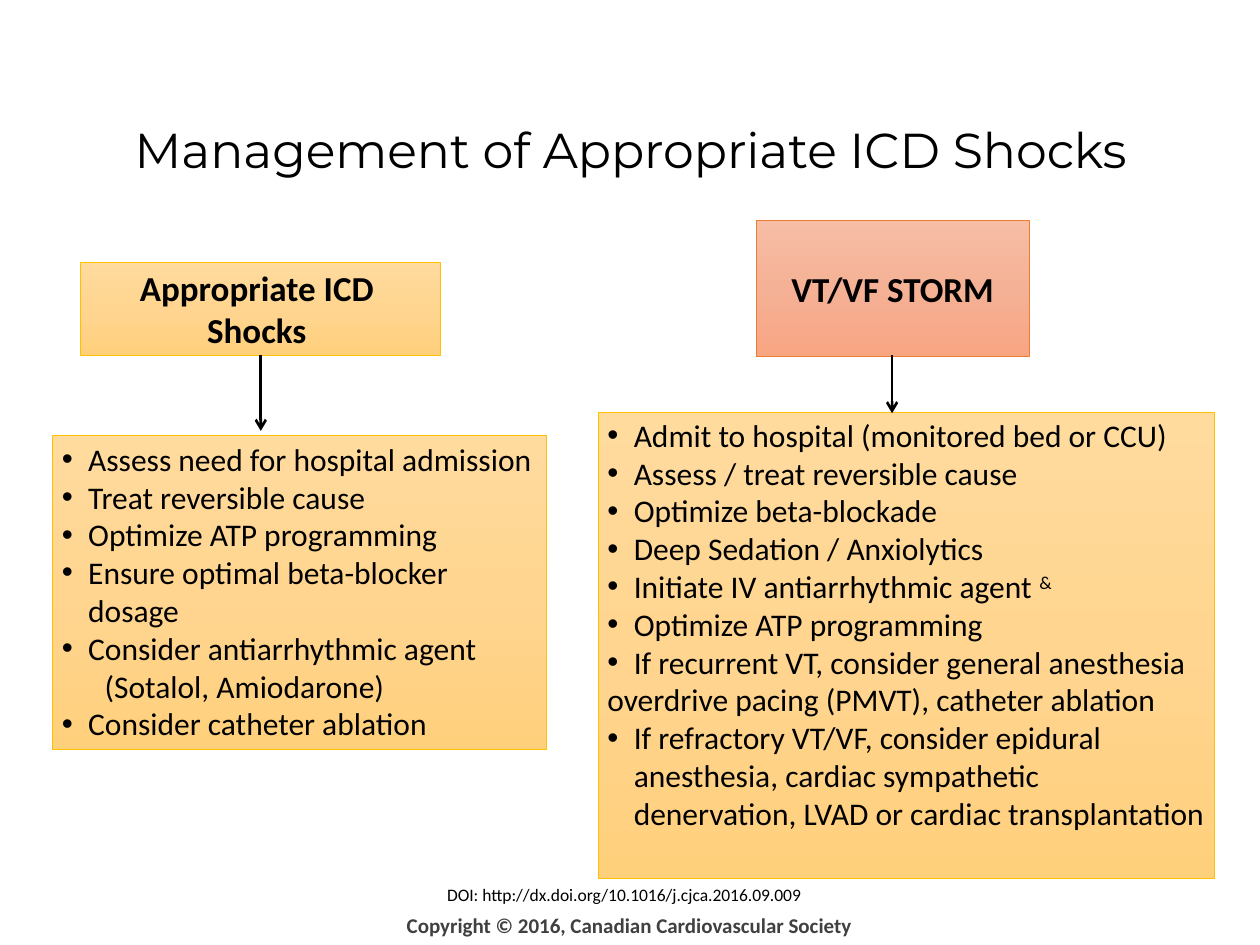
from copy import deepcopy

from pptx import Presentation
from pptx.dml.color import RGBColor
from pptx.enum.shapes import MSO_CONNECTOR, MSO_SHAPE
from pptx.enum.text import MSO_ANCHOR, MSO_AUTO_SIZE, PP_ALIGN
from pptx.oxml.ns import qn
from pptx.oxml.xmlchemy import OxmlElement
from pptx.util import Inches, Pt

BLACK = RGBColor(0x00, 0x00, 0x00)
GREY = RGBColor(0x40, 0x40, 0x40)
GOLD = RGBColor(0xFF, 0xC0, 0x00)
ORANGE = RGBColor(0xED, 0x7D, 0x31)
GOLD_FADE = (RGBColor(0xFF, 0xDB, 0x9E), RGBColor(0xFF, 0xD5, 0x90), RGBColor(0xFF, 0xD0, 0x7C))
ORANGE_FADE = (RGBColor(0xF7, 0xBD, 0xA5), RGBColor(0xF5, 0xB1, 0x96), RGBColor(0xF8, 0xA5, 0x82))

# List items as (text, indent in inches, bulleted, superscript)
SHOCK_STEPS = [
    ("Assess need for hospital admission", 0.21, True, ""),
    ("Treat reversible cause", 0.21, True, ""),
    ("Optimize ATP programming", 0.21, True, ""),
    ("Ensure optimal beta-blocker dosage", 0.21, True, ""),
    ("Consider antiarrhythmic agent", 0.21, True, ""),
    ("(Sotalol, Amiodarone)", 0.34, False, ""),
    ("Consider catheter ablation", 0.21, True, ""),
]
STORM_STEPS = [
    ("Admit to hospital (monitored bed or CCU)", 0.21, True, ""),
    ("Assess / treat reversible cause", 0.21, True, ""),
    ("Optimize beta-blockade", 0.21, True, ""),
    ("Deep Sedation / Anxiolytics", 0.21, True, ""),
    ("Initiate IV antiarrhythmic agent ", 0.21, True, "&"),
    ("Optimize ATP programming", 0.21, True, ""),
    ("If recurrent VT, consider general anesthesia", 0.21, True, ""),
    ("overdrive pacing (PMVT), catheter ablation", 0, False, ""),
    ("If refractory VT/VF, consider epidural anesthesia, cardiac sympathetic "
     "denervation, LVAD or cardiac transplantation", 0.21, True, ""),
]


class FlowSlide:
    body_font = "Calibri"
    title_font = "Montserrat"

    def __init__(self, slide):
        self.s = slide

    def place(self, sp, left, top, width, height):
        sp.left, sp.top = Inches(left), Inches(top)
        sp.width, sp.height = Inches(width), Inches(height)

    def style(self, p, size, color=BLACK, bold=False, name=None):
        for r in p.runs:
            r.font.name = name or self.body_font
            r.font.size = Pt(size)
            r.font.bold = bold
            r.font.color.rgb = color

    def panel(self, sp, fade, line):
        """Give a box its three-step gradient, outline and margins."""
        sp.fill.gradient()
        sp.fill.gradient_angle = 270
        stops = sp._element.spPr.find(".//" + qn("a:gsLst"))
        stops.insert(1, deepcopy(stops[0]))
        for stop, position, color in zip(sp.fill.gradient_stops, (0, 0.5, 1), fade):
            stop.position = position
            stop.color.rgb = color
        sp.line.color.rgb = line
        sp.line.width = Pt(0.5)
        tf = sp.text_frame
        tf.word_wrap = True
        tf.auto_size = MSO_AUTO_SIZE.NONE
        tf.margin_left = tf.margin_right = Inches(0.07)
        tf.margin_top = tf.margin_bottom = Inches(0.03)

    def title(self, text, *box):
        sp = self.s.shapes.title
        self.place(sp, *box)
        tf = sp.text_frame
        tf.text = text
        tf.vertical_anchor = MSO_ANCHOR.MIDDLE
        tf.paragraphs[0].alignment = PP_ALIGN.CENTER
        self.style(tf.paragraphs[0], 28, name=self.title_font)

    def heading(self, text, fade, line, *box):
        sp = self.s.shapes.add_shape(MSO_SHAPE.RECTANGLE, *map(Inches, box))
        sp.shadow.inherit = False
        self.panel(sp, fade, line)
        tf = sp.text_frame
        tf.text = text
        tf.vertical_anchor = MSO_ANCHOR.MIDDLE
        for p in tf.paragraphs:
            p.alignment = PP_ALIGN.CENTER
            self.style(p, 20, bold=True)

    def steps(self, idx, items, *box):
        sp = self.s.placeholders[idx]
        self.place(sp, *box)
        self.panel(sp, GOLD_FADE, GOLD)
        tf = sp.text_frame
        tf.vertical_anchor = MSO_ANCHOR.TOP
        for i, (text, indent, bulleted, superscript) in enumerate(items):
            p = tf.paragraphs[0] if i == 0 else tf.add_paragraph()
            p.text = text
            p.space_before = Pt(0)
            pPr = p._p.get_or_add_pPr()
            pPr.set("marL", str(Inches(indent)))
            pPr.set("indent", str(-Inches(indent) if bulleted else 0))
            if bulleted:
                font = OxmlElement("a:buFont")
                font.set("typeface", "Arial")
                bullet = OxmlElement("a:buChar")
                bullet.set("char", "•")
                pPr.extend([font, bullet])
            else:
                pPr.append(OxmlElement("a:buNone"))
            if superscript:
                r = p.add_run()
                r.text = superscript
                r.font._element.set("baseline", "30000")
            self.style(p, 18)

    def arrow(self, x, top, bottom):
        line = self.s.shapes.add_connector(
            MSO_CONNECTOR.STRAIGHT, Inches(x), Inches(top), Inches(x), Inches(bottom))
        line.line.color.rgb = BLACK
        line.line.width = Pt(1.5)
        head = OxmlElement("a:tailEnd")
        head.set("type", "arrow")
        line.line._get_or_add_ln().append(head)
        line._element.spPr.append(OxmlElement("a:effectLst"))

    def note(self, text, size, color, bold, align, *box):
        tf = self.s.shapes.add_textbox(*map(Inches, box)).text_frame
        tf.word_wrap = True
        tf.text = text
        tf.paragraphs[0].alignment = align
        self.style(tf.paragraphs[0], size, color, bold)


def main():
    prs = Presentation()
    prs.slide_width, prs.slide_height = Inches(10), Inches(7.5)
    two_content = prs.slide_layouts[3]
    flow = FlowSlide(prs.slides.add_slide(two_content))

    flow.title("Management of Appropriate ICD Shocks", 0.2, 0.83, 9.61, 0.71)

    # Appropriate shocks, on the left
    flow.heading("Appropriate ICD \nShocks ", GOLD_FADE, GOLD, 0.64, 2.08, 2.86, 0.74)
    flow.steps(1, SHOCK_STEPS, 0.42, 3.46, 3.92, 2.49)
    flow.arrow(2.07, 2.82, 3.42)

    # Electrical storm, on the right
    flow.heading("VT/VF STORM", ORANGE_FADE, ORANGE, 6, 1.75, 2.17, 1.08)
    flow.steps(2, STORM_STEPS, 4.75, 3.27, 4.89, 3.7)
    flow.arrow(7.08, 2.82, 3.28)

    # Source and copyright
    flow.note("DOI: http://dx.doi.org/10.1016/j.cjca.2016.09.009", 10, BLACK, False,
              PP_ALIGN.LEFT, 3.45, 6.97, 3.08, 0.27)
    flow.note("Copyright © 2016, Canadian Cardiovascular Society", 12, GREY, True,
              PP_ALIGN.CENTER, 1.77, 7.19, 6.45, 0.31)

    prs.save("out.pptx")


if __name__ == "__main__":
    main()
